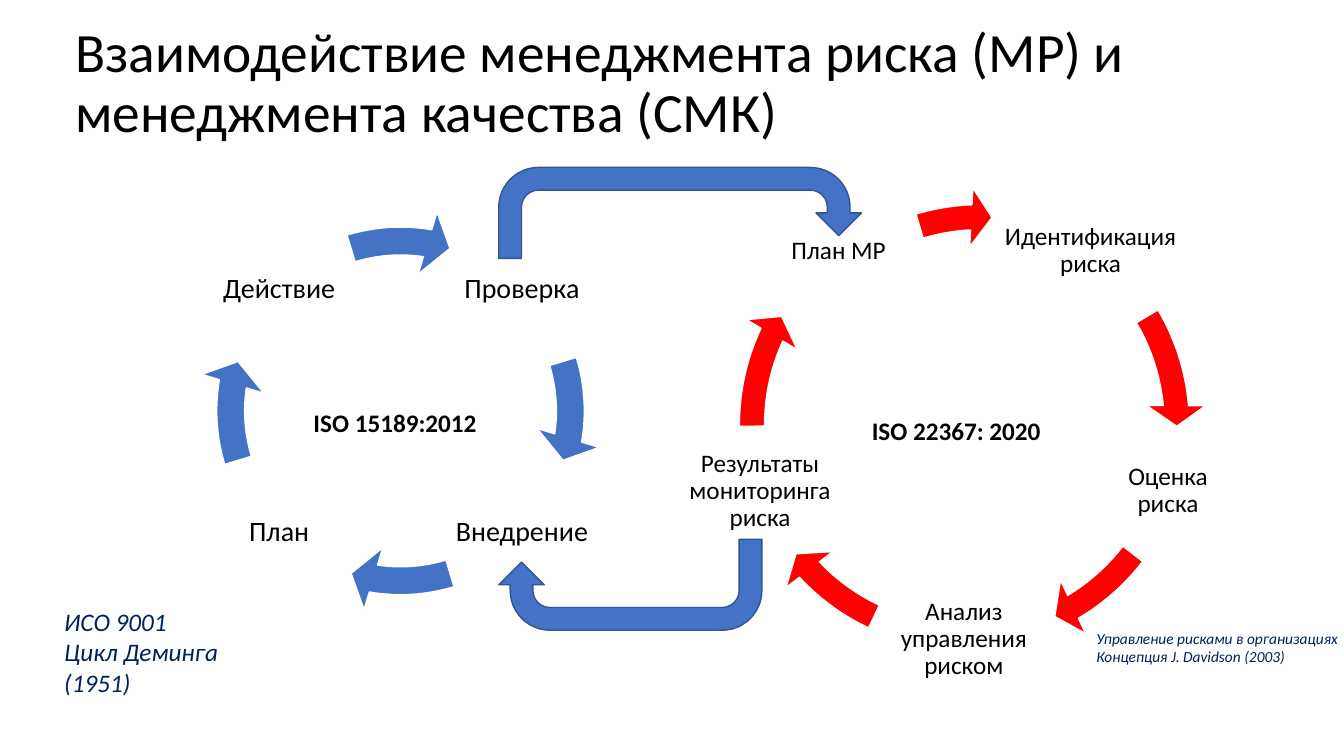
from dataclasses import dataclass

import pptx
import pptx.dml.color
import pptx.enum.shapes
import pptx.enum.text
import pptx.util

Cm = pptx.util.Cm
Shape = pptx.enum.shapes.MSO_SHAPE
Align = pptx.enum.text.PP_ALIGN
Anchor = pptx.enum.text.MSO_ANCHOR


@dataclass(frozen=True)
class Theme:
    font: str = "Calibri"
    text: str = "000000"
    note: str = "002060"
    quality: str = "4472C4"
    quality_edge: str = "325491"
    risk: str = "FF0000"
    arrow_edge: str = "FFFFFF"
    title_size: float = 39.6
    quality_size: int = 20
    body_size: int = 18
    source_size: int = 11


THEME = Theme()


def rgb(value):
    return pptx.dml.color.RGBColor.from_string(value)


def add_text(s, box, lines, size, color=THEME.text, bold=False, italic=False,
             align=Align.LEFT, anchor=Anchor.TOP, spacing=1.0, inset=None):
    sp = s.shapes.add_textbox(*map(Cm, box))
    tf = sp.text_frame
    tf.word_wrap = True
    tf.vertical_anchor = anchor
    if inset is not None:
        tf.margin_left = tf.margin_right = Cm(inset)
        tf.margin_top = tf.margin_bottom = Cm(inset)
    for i, line in enumerate(lines):
        p = tf.add_paragraph() if i else tf.paragraphs[0]
        p.alignment = align
        p.line_spacing = spacing
        r = p.add_run()
        r.text = line
        r.font.name = THEME.font
        r.font.size = pptx.util.Pt(size)
        r.font.bold = bold
        r.font.italic = italic
        r.font.color.rgb = rgb(color)


def add_label(s, box, text, size):
    add_text(s, box, [text], size, align=Align.CENTER, anchor=Anchor.MIDDLE,
             spacing=0.9, inset=0.08)


def add_arrow(s, kind, box, fill, edge, adjustments=()):
    sp = s.shapes.add_shape(kind, *map(Cm, box))
    sp.shadow.inherit = False
    sp.fill.solid()
    sp.fill.fore_color.rgb = rgb(fill)
    sp.line.color.rgb = rgb(edge)
    sp.line.width = pptx.util.Pt(1)
    for i, value in enumerate(adjustments):
        sp.adjustments[i] = value
    return sp


def add_title(s, box):
    add_text(s, box, ["Взаимодействие менеджмента риска (МР) и менеджмента качества (СМК)"],
             THEME.title_size, anchor=Anchor.MIDDLE, spacing=0.9)


def add_quality_cycle(s, box):
    x, y, w, h = box
    side, margin, step = 3.61, 0.23, 6.12
    quarter, full = 54, 216
    steps = [("Проверка", 1, 0), ("Внедрение", 1, 1), ("План", 0, 1), ("Действие", 0, 0)]
    for i, (text, col, row) in enumerate(steps):
        label = (x + margin + col * step, y + margin + row * step, side, side)
        add_label(s, label, text, THEME.quality_size)
        end = 5.5 + i * quarter
        start = (205.84 + i * quarter) % full
        add_arrow(s, Shape.CIRCULAR_ARROW, box, THEME.quality, THEME.arrow_edge,
                  (6.9 / 100, 4.65, end, start, 0.08))
    add_text(s, (x + 2.65, y + 4.87, 4.9, 1.02), ["ISO 15189:2012"],
             THEME.body_size, bold=True)


def add_risk_cycle(s, box):
    x, y, w, h = box
    label_h = 3.25
    steps = [
        ("Идентификация риска", 6.38, 0.1, 5.79, 212.95, 197.65, 0, 0),
        ("Оценка риска", 9.6, 6.15, 3.25, 35.53, 22.52, 0, 0),
        ("Анализ управления риском", 3.78, 9.88, 4.6, 82.12, 69.12, 0, 0),
        ("Результаты мониторинга риска", -1.52, 6.15, 4.93, 122.99, 107.7, 0, 0),
        ("План МР", 1.3, 0.1, 3.25, 160.48, 151.97, 0.41, 0.13),
    ]
    for text, left, top, label_w, end, start, dx, dy in steps:
        add_label(s, (x + left, y + top, label_w, label_h), text, THEME.body_size)
        add_arrow(s, Shape.CIRCULAR_ARROW, (x + dx, y + dy, w, h),
                  THEME.risk, THEME.arrow_edge,
                  (5.2 / 100, 3.36, end, start, 6.1 / 100))
    add_text(s, (x + 3.51, y + 5.74, 6.63, 1.02), ["ISO 22367: 2020"],
             THEME.body_size, bold=True)


def add_links(s, box):
    x, y, w, h = box
    arrow_h = 2.29
    add_arrow(s, Shape.U_TURN_ARROW, (x, y, w, arrow_h),
              THEME.quality, THEME.quality_edge)
    back = add_arrow(s, Shape.U_TURN_ARROW, (x, y + h - arrow_h, 6.63, arrow_h),
                     THEME.quality, THEME.quality_edge)
    back.rotation = 180


def add_note(s, box, lines, size):
    add_text(s, box, lines, size, color=THEME.note, italic=True)


def main():
    prs = pptx.Presentation()
    prs.slide_width, prs.slide_height = Cm(33.87), Cm(19.05)
    s = prs.slides.add_slide(prs.slide_layouts[6])
    add_title(s, (1.65, 0.69, 31.01, 2.9))
    add_quality_cycle(s, (5, 5.26, 10.19, 10.19))
    add_risk_cycle(s, (18.21, 4.6, 12.19, 12.19))
    add_links(s, (12.57, 4.22, 9.14, 11.66))
    add_note(s, (1.37, 15.16, 7.19, 2.57),
             ["ИСО 9001", "Цикл Деминга", "(1951)"], THEME.body_size)
    add_note(s, (27.38, 15.72, 7.19, 1.19),
             ["Управление рисками в организациях", "Концепция J. Davidson (2003)"],
             THEME.source_size)
    prs.save("out.pptx")


if __name__ == "__main__":
    main()
